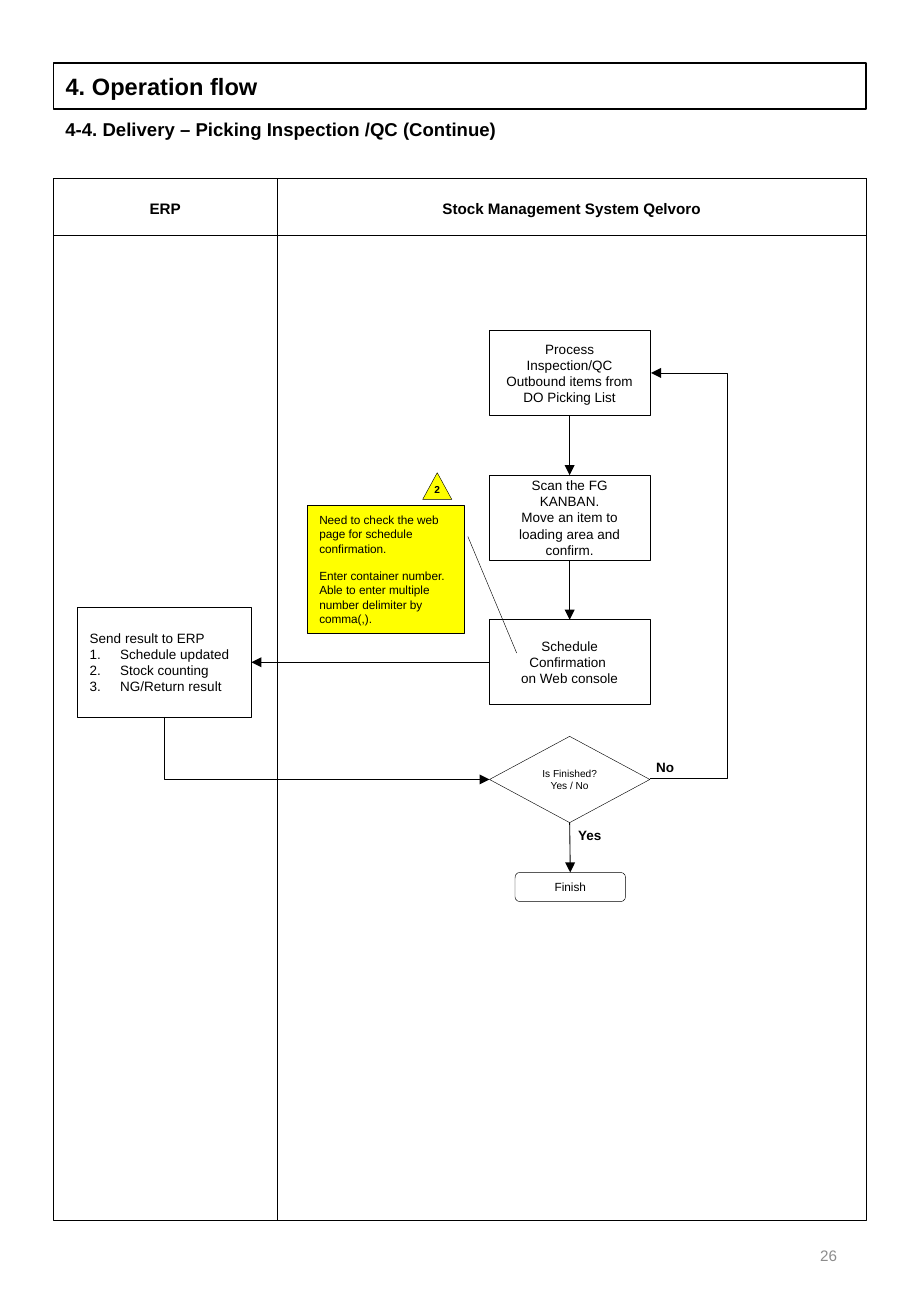
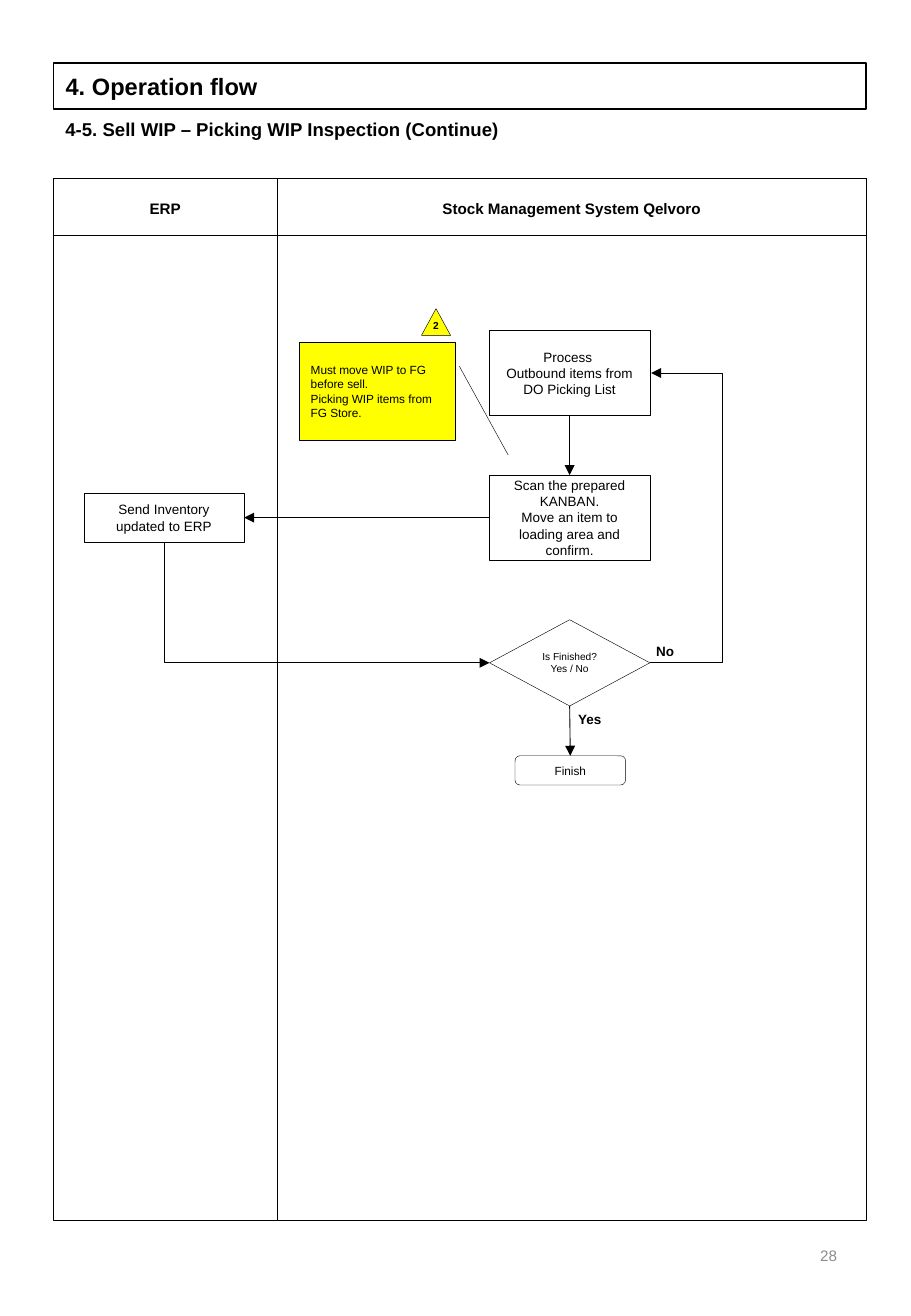
from lxml.etree import SubElement
from pptx import Presentation
from pptx.dml.color import RGBColor
from pptx.enum.shapes import MSO_CONNECTOR as Link, MSO_SHAPE as Form
from pptx.enum.text import MSO_ANCHOR as Anchor, MSO_AUTO_SIZE as AutoSize, PP_ALIGN as Align
from pptx.oxml.ns import qn
from pptx.util import Inches, Pt

COLORS = {"ink": "000000", "note": "FFFF00", "number": "8C8C8C"}
FONT = "Arial"
HAIRLINE, THIN = 0.25, 0.5
TOP, LEFT, BOTTOM, RIGHT = range(4)
FRAME = (0.44, 1.47, 6.69, 8.57)
STEP_LEFT, STEP_WIDTH, STEP_HEIGHT = 4.03, 1.32, 0.7
STEP_RIGHT = STEP_LEFT + STEP_WIDTH
STEP_TOPS = (2.72, 3.91, 5.1)


def color(name):
    return RGBColor.from_string(COLORS[name])


def lengths(*values):
    return [Inches(value) for value in values]


def write(box, lines, size, bold=False, align=Align.CENTER, ink="ink"):
    frame = box.text_frame
    frame.text = "\n".join(lines)
    frame.word_wrap = True
    frame.auto_size = AutoSize.NONE
    frame.vertical_anchor = Anchor.MIDDLE
    for para in frame.paragraphs:
        para.alignment = align
        for span in para.runs:
            span.font.name = FONT
            span.font.size = Pt(size)
            span.font.bold = bold
            span.font.color.rgb = color(ink)
    return frame


def outline(item, width):
    item.line.color.rgb = color("ink")
    item.line.width = Pt(width)


def add_label(page, box, text, size, bold=True, align=Align.CENTER, ink="ink"):
    label = page.shapes.add_textbox(*lengths(*box))
    write(label, [text], size, bold, align, ink)


def add_block(page, form, box, lines=(), size=8, fill=None, **style):
    block = page.shapes.add_shape(form, *lengths(*box))
    block.shadow.inherit = False
    if fill:
        block.fill.solid()
        block.fill.fore_color.rgb = color(fill)
    else:
        block.fill.background()
    outline(block, HAIRLINE)
    write(block, lines, size, **style)
    return block


def add_line(page, start, end, kind=Link.STRAIGHT, arrow=True):
    line = page.shapes.add_connector(kind, *lengths(*start, *end))
    outline(line, THIN)
    if arrow:
        SubElement(line.line._get_or_add_ln(), qn("a:tailEnd"), type="triangle")
    SubElement(line._element.spPr, qn("a:effectLst"))
    return line


def join(page, source, source_site, target, target_site):
    line = add_line(page, (0, 0), (1, 1))
    line.begin_connect(source, source_site)
    line.end_connect(target, target_site)
    return line


def join_down_then_right(page, source, target):
    line = join(page, source, BOTTOM, target, LEFT)
    across, down = line.width, line.height
    center_x, center_y = line.left + across // 2, line.top + down // 2
    line.left, line.top = center_x - down // 2, center_y - across // 2
    line.width, line.height = down, across
    properties = line._element.spPr
    properties.find(qn("a:prstGeom")).set("prst", "bentConnector2")
    transform = properties.find(qn("a:xfrm"))
    transform.set("rot", "16200000")
    transform.set("flipH", "1")


def add_return_loop(page, start_y, end_y, loop_x):
    gap = 0.01
    line = add_line(page, (STEP_RIGHT, start_y), (STEP_RIGHT + gap, end_y), Link.ELBOW)
    geometry = line._element.spPr.find(qn("a:prstGeom"))
    values = geometry.find(qn("a:avLst"))
    if values is None:
        values = SubElement(geometry, qn("a:avLst"))
    ratio = round((loop_x - STEP_RIGHT) / gap * 100000)
    SubElement(values, qn("a:gd"), name="adj1", fmla=f"val {ratio}")


def add_heading(page, box, subtitle):
    left, top, width, height = box
    title = page.shapes.title
    title.left, title.top, title.width, title.height = lengths(*box)
    write(title, ["4. Operation flow"], 14, True, Align.LEFT)
    outline(title, 1)
    add_label(page, (left, top + height + 0.02, width, 0.29), subtitle, 11, align=Align.LEFT)


def add_lanes(page, box):
    left, top, width, height = box
    header, split = 0.47, 1.84
    add_block(page, Form.RECTANGLE, box)
    add_block(page, Form.RECTANGLE, (left, top, width, header))
    add_line(page, (left + split, top), (left + split, top + height), arrow=False)
    add_label(page, (left, top + 0.01, split, header), "ERP", 9)
    add_label(page, (left + split, top + 0.01, width - split, header),
              "Stock Management System Qelvoro", 9)


def add_steps(page, texts):
    steps = [add_block(page, Form.RECTANGLE, (STEP_LEFT, top, STEP_WIDTH, STEP_HEIGHT), lines)
             for top, lines in zip(STEP_TOPS, texts)]
    for upper, lower in zip(steps, steps[1:]):
        join(page, upper, BOTTOM, lower, TOP)
    return steps


def add_ending(page, top, loop_x):
    box = (STEP_LEFT, top, STEP_WIDTH, 0.71)
    decision = add_block(page, Form.FLOWCHART_DECISION, box, ["Is Finished?", "Yes / No"], 6)
    finish = add_block(page, Form.ROUNDED_RECTANGLE,
                       (STEP_LEFT + 0.21, top + 1.12, 0.91, 0.24), ["Finish"], 7)
    join(page, decision, BOTTOM, finish, TOP)
    add_label(page, (STEP_LEFT + 0.57, top + 0.7, 0.51, 0.23), "Yes", 8)
    add_label(page, (STEP_LEFT + 1.19, top + 0.14, 0.51, 0.23), "No", 8)
    add_return_loop(page, top + 0.35, STEP_TOPS[0] + STEP_HEIGHT / 2, loop_x)
    return decision


def add_erp_result(page, box, lines, last_step, decision, numbered):
    align = Align.LEFT if numbered else Align.CENTER
    result = add_block(page, Form.RECTANGLE, box, lines, align=align)
    if numbered:
        for para in result.text_frame.paragraphs[1:]:
            settings = para._p.get_or_add_pPr()
            settings.set("marL", str(Inches(0.25)))
            settings.set("indent", str(-Inches(0.25)))
            SubElement(settings, qn("a:buFont"), typeface="+mj-lt")
            SubElement(settings, qn("a:buAutoNum"), type="arabicPeriod")
    join(page, last_step, LEFT, result, RIGHT)
    join_down_then_right(page, result, decision)


def add_note(page, box, lines, gap, badge):
    note = add_block(page, Form.LINE_CALLOUT_1, box, lines, 7, "note", align=Align.LEFT)
    for index, value in enumerate((0.244, 1.025, 1.156, 1.336)):
        note.adjustments[index] = value
    note.text_frame.paragraphs[0].space_after = Pt(gap)
    marker = add_block(page, Form.ISOSCELES_TRIANGLE, (*badge, 0.24, 0.22), ["2"], 6, "note",
                       bold=True)
    marker.text_frame.margin_top = 0


def add_flow_page(deck, flow):
    page = deck.slides.add_slide(deck.slide_layouts[5])
    add_heading(page, (0.44, 0.52, 6.69, 0.38), flow["subtitle"])
    add_lanes(page, FRAME)
    steps = add_steps(page, flow["steps"])
    decision = add_ending(page, flow["decision_top"], flow["loop_x"])
    add_erp_result(page, *flow["result"], steps[-1], decision, flow["numbered"])
    add_note(page, *flow["note"])
    add_label(page, (5.3, 10.04, 1.69, 0.58), flow["number"], 9, False, Align.RIGHT, "number")


FLOWS = [
    {
        "subtitle": "4-4. Delivery – Picking Inspection /QC (Continue)",
        "steps": [
            ["Process Inspection/QC Outbound items from DO Picking List"],
            ["Scan the FG KANBAN.", "Move an item to loading area and confirm."],
            ["Schedule Confirmation ", "on Web console"],
        ],
        "decision_top": 6.06,
        "loop_x": 6.0,
        "result": ((0.64, 5, 1.43, 0.9), ["Send result to ERP", "Schedule updated",
                                          "Stock counting", "NG/Return result"]),
        "numbered": True,
        "note": ((2.53, 4.16, 1.29, 1.05),
                 ["Need to check the web page for schedule confirmation.",
                  "Enter container number. Able to enter multiple number delimiter by comma(,)."],
                 8, (3.48, 3.89)),
        "number": "26",
    },
    {
        "subtitle": "4-5. Sell WIP – Picking WIP Inspection (Continue)",
        "steps": [
            ["Process ", "Outbound items from DO Picking List"],
            ["Scan the prepared KANBAN.", "Move an item to loading area and confirm."],
        ],
        "decision_top": 5.1,
        "loop_x": 5.96,
        "result": ((0.69, 4.06, 1.32, 0.4), ["Send Inventory updated to ERP"]),
        "numbered": False,
        "note": ((2.46, 2.82, 1.29, 0.8),
                 ["Must move WIP to FG before sell.", "Picking WIP items from FG Store."],
                 0, (3.47, 2.54)),
        "number": "28",
    },
]


def main():
    deck = Presentation()
    deck.slide_width, deck.slide_height = lengths(7.5, 10.83)
    for flow in FLOWS:
        add_flow_page(deck, flow)
    deck.save("out.pptx")


if __name__ == "__main__":
    main()
